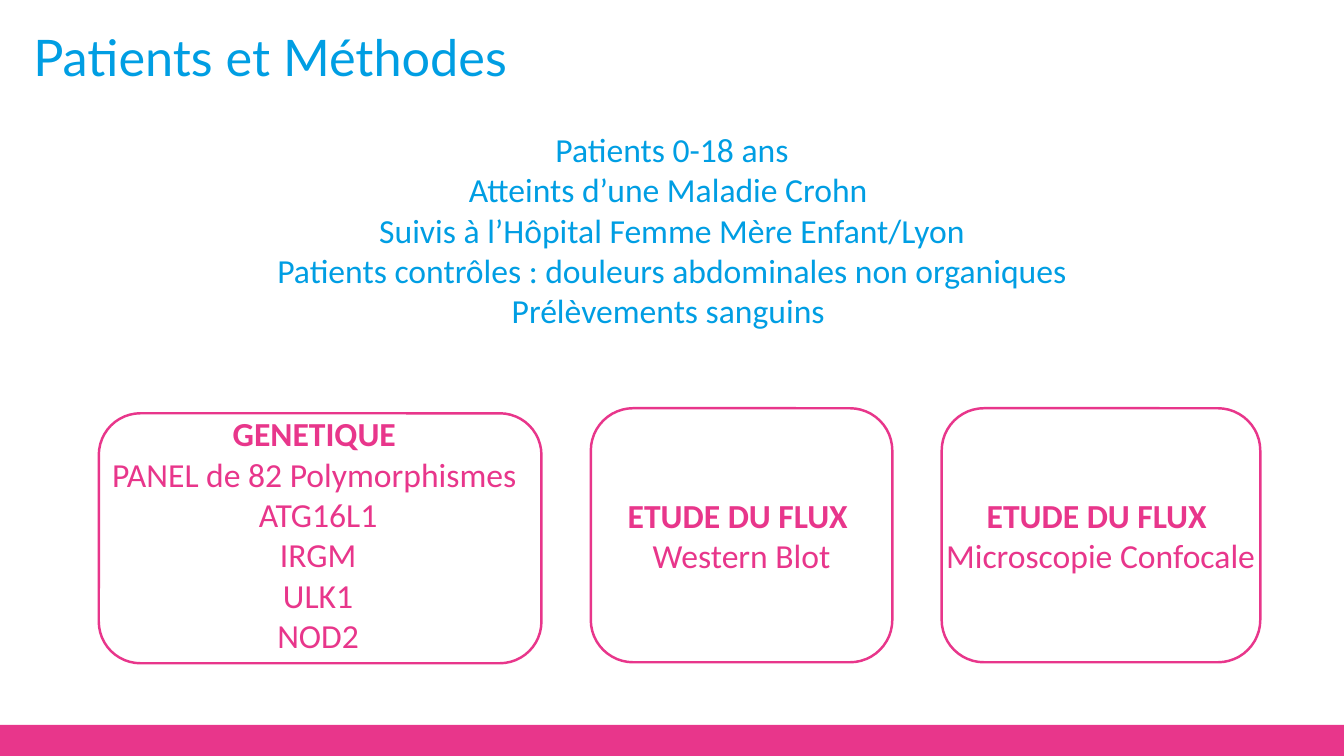
from pptx import Presentation
from pptx.dml.color import RGBColor
from pptx.enum.shapes import MSO_SHAPE
from pptx.enum.text import MSO_ANCHOR, MSO_AUTO_SIZE, PP_ALIGN
from pptx.util import Inches, Pt

BLUE = RGBColor(0x00, 0x9E, 0xE3)
PINK = RGBColor(0xE8, 0x36, 0x8B)

TITLE_FONT = {"name": "Lato", "size": Pt(36), "bold": False}
BODY_FONT = {"name": "Calibri", "size": Pt(24)}


class SlideBuilder:
    """Holds the slide and its style, and adds each kind of element."""

    def __init__(self, page):
        self.page = page

    def add_span(self, para, text, color, font_format):
        span = para.add_run()
        span.text = text
        for name, value in font_format.items():
            setattr(span.font, name, value)
        span.font.color.rgb = color

    def title(self, text, left, top, width, height):
        box = self.page.shapes.title
        geometry = {"left": left, "top": top, "width": width, "height": height}
        for name, value in geometry.items():
            setattr(box, name, Inches(value))
        frame = box.text_frame
        frame.auto_size = MSO_AUTO_SIZE.NONE
        frame.vertical_anchor = MSO_ANCHOR.MIDDLE
        para = frame.paragraphs[0]
        para.alignment = PP_ALIGN.LEFT
        para.line_spacing = 0.9
        self.add_span(para, text, BLUE, TITLE_FONT)

    def lines(self, texts, color, place, bold_heading=False):
        box = self.page.shapes.add_textbox(*map(Inches, place))
        frame = box.text_frame
        frame.word_wrap = True
        frame.auto_size = MSO_AUTO_SIZE.SHAPE_TO_FIT_TEXT
        for index, text in enumerate(texts):
            para = frame.add_paragraph() if index else frame.paragraphs[0]
            para.alignment = PP_ALIGN.CENTER
            bold = bold_heading and index == 0
            self.add_span(para, text, color, {**BODY_FONT, "bold": bold})

    def shape(self, kind, place):
        shape = self.page.shapes.add_shape(kind, *map(Inches, place))
        shape.shadow.inherit = False
        return shape

    def band(self, place):
        band = self.shape(MSO_SHAPE.RECTANGLE, place)
        band.fill.solid()
        band.fill.fore_color.rgb = PINK
        band.line.fill.background()

    def outline(self, place):
        frame = self.shape(MSO_SHAPE.ROUNDED_RECTANGLE, place)
        frame.fill.background()
        frame.line.color.rgb = PINK
        frame.line.width = Pt(1.75)


PATIENTS = [
    "Patients 0-18 ans",
    "Atteints d’une Maladie Crohn ",
    "Suivis à l’Hôpital Femme Mère Enfant/Lyon",
    "Patients contrôles : douleurs abdominales non organiques",
    "Prélèvements sanguins ",
]

# Each study: lines, place of the text, place of the outline
STUDIES = [
    (
        ["GENETIQUE ", "PANEL de 82 Polymorphismes ", "ATG16L1", "IRGM", "ULK1", "NOD2"],
        (0.49, 4.05, 5.33, 2.52),
        (0.98, 4.1, 4.39, 2.48),
    ),
    (
        ["ETUDE DU FLUX ", "Western Blot"],
        (5.86, 4.86, 2.99, 0.91),
        (5.86, 4.05, 2.99, 2.52),
    ),
    (
        ["ETUDE DU FLUX ", "Microscopie Confocale"],
        (9.14, 4.86, 3.55, 0.91),
        (9.34, 4.05, 3.16, 2.52),
    ),
]


def main():
    deck = Presentation()
    deck.slide_width = Inches(13.33)
    deck.slide_height = Inches(7.5)
    title_only = deck.slide_layouts[5]
    builder = SlideBuilder(deck.slides.add_slide(title_only))

    # Footer band and title
    builder.band((0, 7.19, 13.33, 0.31))
    builder.title("Patients et Méthodes", 0.23, 0.11, 12.96, 0.97)

    # Study population
    builder.lines(PATIENTS, BLUE, (2.5, 1.23, 8.33, 2.52))

    # Three studies
    for texts, text_place, outline_place in STUDIES:
        builder.outline(outline_place)
        builder.lines(texts, PINK, text_place, bold_heading=True)

    deck.save("out.pptx")


if __name__ == "__main__":
    main()
